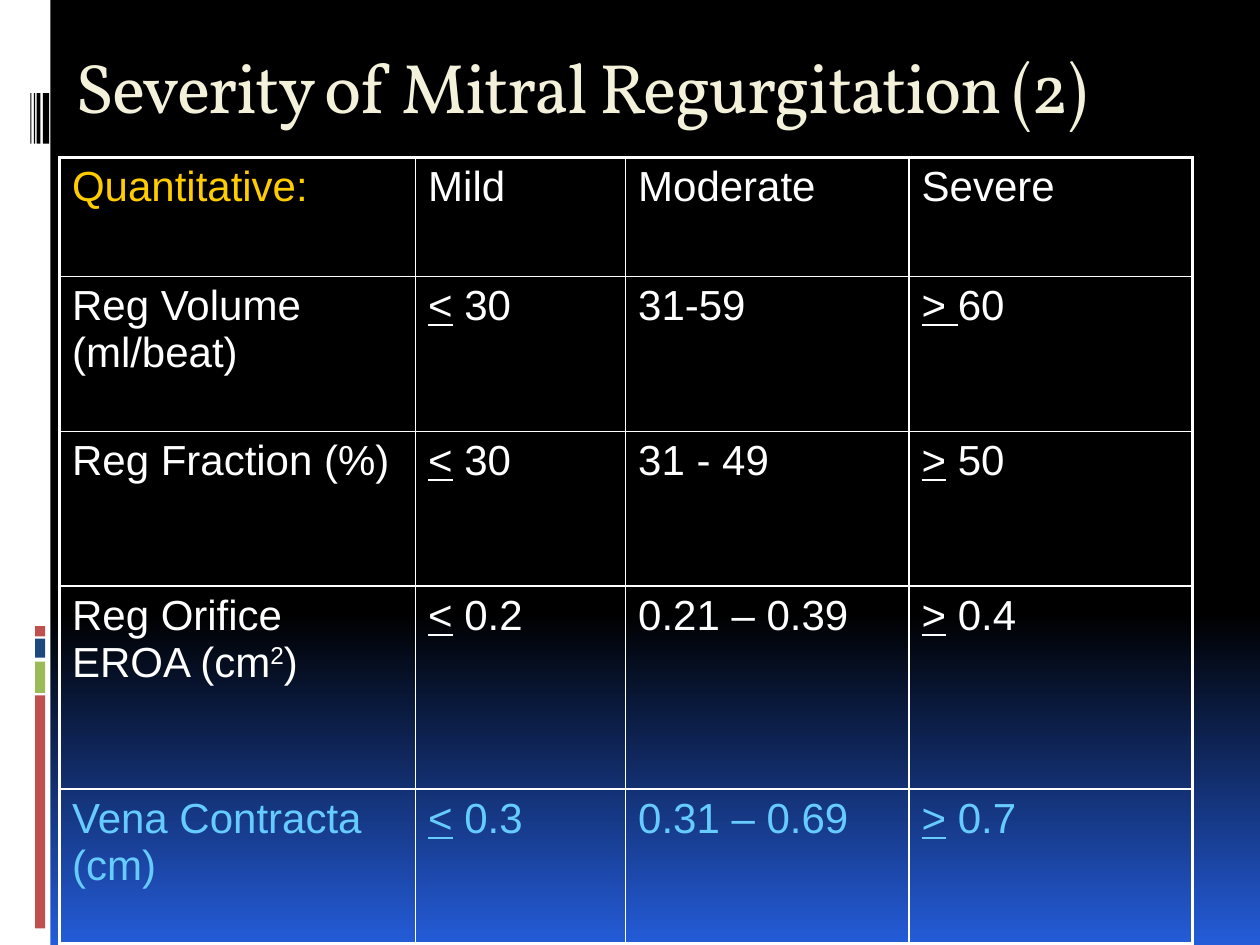
from copy import deepcopy
from lxml.etree import SubElement
from pptx import Presentation
from pptx.dml.color import RGBColor
from pptx.enum.shapes import MSO_SHAPE as Shape
from pptx.enum.text import MSO_ANCHOR as Anchor
from pptx.oxml.ns import qn
from pptx.util import Pt

TITLE = "Severity of Mitral Regurgitation (2)"
WHITE, YELLOW, SKY, CREAM = "FFFFFF", "FFCC00", "66CCFF", "F4F1DA"
BACKGROUND = [(0, "000000"), (0.65, "000000"), (1, "245CD9")]

UNDER, SUPER = "underline", "superscript"
ROWS = [
    ["Quantitative:", "Mild", "Moderate", "Severe"],
    ["Reg Volume (ml/beat)", [("<", UNDER), " 30"], "31-59", [("> ", UNDER), "60"]],
    ["Reg Fraction (%)", [("<", UNDER), " 30"], "31 - 49", [(">", UNDER), " 50"]],
    [["Reg Orifice EROA (cm", ("2", SUPER), ")"], [("<", UNDER), " 0.2"],
     "0.21 – 0.39", [(">", UNDER), " 0.4"]],
    ["Vena Contracta (cm)", [("<", UNDER), " 0.3"], "0.31 – 0.69", [(">", UNDER), " 0.7"]],
]
COLUMN_WIDTHS = [203.5, 120, 162, 162]
ROW_HEIGHTS = [68, 88.5, 88.5, 116, 88.5]
TABLE_LEFT, TABLE_TOP = 34, 90

SIDE_BAR = (0, 0, 28.8, 540, WHITE)
COLOR_BLOCKS = [(397.4, 133.2, "C0504D"), (378, 18, "9BBB59"),
                (365, 10.8, "1F497D"), (357.8, 5.8, "C0504D")]
BARCODE_LINES = [(24.5, 3.6), (20.9, 2.2), (19.4, 0.7), (17.3, 0.7)]


def color(value):
    return RGBColor.from_string(value)


def paint_background(slide):
    fill = slide.background.fill
    fill.gradient()
    fill.gradient_angle = 270
    stop_list = slide.element.find(".//" + qn("a:gsLst"))
    stop_list.append(deepcopy(stop_list[0]))
    for stop, (position, value) in zip(fill.gradient_stops, BACKGROUND):
        stop.position = position
        stop.color.rgb = color(value)


def add_block(slide, left, top, width, height, value):
    shape = slide.shapes.add_shape(Shape.RECTANGLE, Pt(left), Pt(top), Pt(width), Pt(height))
    shape.shadow.inherit = False
    shape.fill.solid()
    shape.fill.fore_color.rgb = color(value)
    shape.line.fill.background()


def add_title(slide):
    box = slide.shapes.add_textbox(Pt(36), Pt(21.6), Pt(648), Pt(90))
    frame = box.text_frame
    frame.word_wrap = True
    frame.vertical_anchor = Anchor.TOP
    frame.text = TITLE
    run = frame.paragraphs[0].runs[0]
    run.font.name, run.font.size = "Vollkorn", Pt(40)
    run.font.color.rgb = color(CREAM)
    run.font._element.set("spc", "-100")


def write_cell(cell, content, value):
    paragraph = cell.text_frame.paragraphs[0]
    for part in [content] if isinstance(content, str) else content:
        text, style = (part, None) if isinstance(part, str) else part
        run = paragraph.add_run()
        run.text = text
        font = run.font
        font.name, font.size = "Arial", Pt(24)
        font.color.rgb = color(value)
        if style == UNDER:
            font.underline = True
        elif style == SUPER:
            font._element.set("baseline", "30000")


def set_borders(cell, outer_sides):
    properties = cell._tc.get_or_add_tcPr()
    for side, outer in outer_sides.items():
        width = Pt(2.25 if outer else 1)
        line = SubElement(properties, qn("a:" + side), w=str(int(width)))
        fill = SubElement(line, qn("a:solidFill"))
        SubElement(fill, qn("a:srgbClr"), val=WHITE)


def add_severity_table(slide):
    last_row, last_column = len(ROWS) - 1, len(COLUMN_WIDTHS) - 1
    table = slide.shapes.add_table(
        len(ROWS), len(COLUMN_WIDTHS), Pt(TABLE_LEFT), Pt(TABLE_TOP),
        Pt(sum(COLUMN_WIDTHS)), Pt(sum(ROW_HEIGHTS))).table
    table.first_row = table.horz_banding = False
    for column, width in zip(table.columns, COLUMN_WIDTHS):
        column.width = Pt(width)
    for row, height in zip(table.rows, ROW_HEIGHTS):
        row.height = Pt(height)
    for i, contents in enumerate(ROWS):
        for j, content in enumerate(contents):
            cell = table.cell(i, j)
            value = SKY if i == last_row else YELLOW if i == j == 0 else WHITE
            write_cell(cell, content, value)
            set_borders(cell, {"lnL": j == 0, "lnR": j == last_column,
                               "lnT": i == 0, "lnB": i == last_row})
            cell.fill.background()


def main():
    presentation = Presentation()
    presentation.slide_width, presentation.slide_height = Pt(720), Pt(540)
    slide = presentation.slides.add_slide(presentation.slide_layouts[6])
    paint_background(slide)
    add_block(slide, *SIDE_BAR)
    for top, height, value in COLOR_BLOCKS:
        add_block(slide, 20, top, 5.8, height, value)
    for left, width in BARCODE_LINES:
        add_block(slide, left, 53.3, width, 28.8, "000000")
    add_title(slide)
    add_severity_table(slide)
    presentation.save("out.pptx")


if __name__ == "__main__":
    main()
